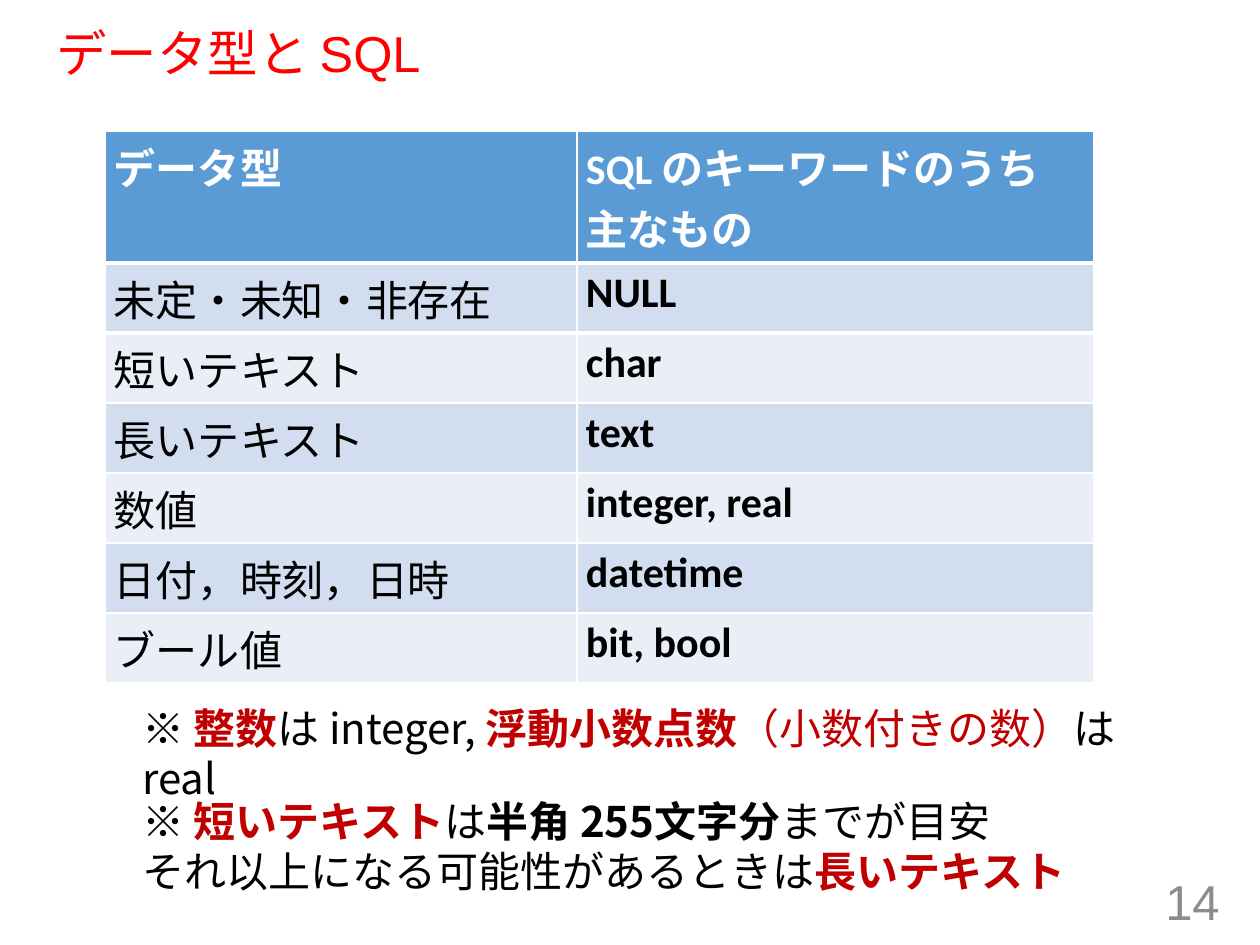
"""Build the slide on data types and their SQL keywords."""
from lxml.etree import SubElement
from pptx import Presentation
from pptx.dml.color import RGBColor
from pptx.enum.text import MSO_ANCHOR, PP_ALIGN
from pptx.oxml.ns import qn
from pptx.util import Emu, Pt

SCALE = 914400 / 126
CJK = "Noto Sans CJK JP"
RED = RGBColor(0xFF, 0x00, 0x00)
DARK_RED = RGBColor(0xC0, 0x00, 0x00)
BLACK = RGBColor(0x00, 0x00, 0x00)
WHITE = RGBColor(0xFF, 0xFF, 0xFF)
GRAY = RGBColor(0x8C, 0x8C, 0x8C)
HEADER = RGBColor(0x5B, 0x9B, 0xD5)
BANDS = (RGBColor(0xD2, 0xDE, 0xEF), RGBColor(0xEA, 0xEF, 0xF7))

HEADINGS = ("データ型", "SQL のキーワードのうち\n主なもの")
TYPES = (
    ("未定・未知・非存在", "NULL"),
    ("短いテキスト", "char"),
    ("長いテキスト", "text"),
    ("数値", "integer, real"),
    ("日付，時刻，日時", "datetime"),
    ("ブール値", "bit, bool"),
)
KEY = {"color": DARK_RED, "bold": True}
NUMBER_NOTE = [[
    ("※ ", {}), ("整数", KEY), ("は integer, ", {}), ("浮動小数点数", KEY),
    ("（小数付きの数）", {"color": DARK_RED}), ("は real", {}),
]]
TEXT_NOTE = [
    [("※ ", {}), ("短いテキスト", KEY), ("は", {}),
     ("半角 255文字分", {"bold": True}), ("までが目安", {})],
    [("それ以上になる可能性があるときは", {}), ("長いテキスト", KEY)],
]


def px(n):
    """Turn pixels into EMU."""
    return Emu(round(n * SCALE))


def add_run(p, text, size=24, font=CJK, color=BLACK, bold=False):
    """Add formatted text to a paragraph."""
    r = p.add_run()
    r.text = text
    r.font.size = Pt(size)
    r.font.name = font
    r.font.bold = bold
    r.font.color.rgb = color
    SubElement(r.font._element, qn("a:ea"), typeface=CJK)


def add_text(s, box, paragraphs, anchor=MSO_ANCHOR.TOP, align=PP_ALIGN.LEFT,
             spacing=None, wrap=True):
    """Add a text box of paragraphs made of (text, format) runs."""
    tf = s.shapes.add_textbox(*map(px, box)).text_frame
    tf.word_wrap = wrap
    tf.vertical_anchor = anchor
    for i, runs in enumerate(paragraphs):
        p = tf.add_paragraph() if i else tf.paragraphs[0]
        p.alignment = align
        p.line_spacing = spacing
        for text, fmt in runs:
            add_run(p, text, **fmt)


def add_border(cell, side, width):
    """Draw a white border on one side of a table cell."""
    props = cell._tc.get_or_add_tcPr()
    line = SubElement(props, qn(f"a:ln{side}"), w=str(Pt(width)))
    fill = SubElement(line, qn("a:solidFill"))
    SubElement(fill, qn("a:srgbClr"), val=str(WHITE))


def fill_cell(cell, text, fill, **fmt):
    """Set the fill, margins and text of a table cell."""
    cell.fill.solid()
    cell.fill.fore_color.rgb = fill
    cell.margin_left = cell.margin_right = px(9)
    cell.margin_top = cell.margin_bottom = px(5)
    tf = cell.text_frame
    for i, line in enumerate(text.split("\n")):
        add_run(tf.add_paragraph() if i else tf.paragraphs[0], line, **fmt)


def add_type_table(s):
    """Add the table of data types and keywords."""
    frame = s.shapes.add_table(len(TYPES) + 1, 2, px(105), px(131), px(989), px(552))
    table = frame.table
    for column, width in zip(table.columns, (472, 517)):
        column.width = px(width)
    for i, row in enumerate(table.rows):
        row.height = px(70 if i else 132)
    for j, heading in enumerate(HEADINGS):
        add_border(table.cell(0, j), "B", 3)
        add_border(table.cell(1, j), "T", 3)
        fill_cell(table.cell(0, j), heading, HEADER, font="Calibri", color=WHITE, bold=True)
    for i, (name, keyword) in enumerate(TYPES):
        band = BANDS[i % 2]
        fill_cell(table.cell(i + 1, 0), name, band)
        fill_cell(table.cell(i + 1, 1), keyword, band, font="Calibri", bold=True)


def main():
    """Build and save the slide."""
    prs = Presentation()
    prs.slide_width, prs.slide_height = px(1260), px(945)
    s = prs.slides.add_slide(prs.slide_layouts[6])
    title = ("データ型と SQL", {"size": 28.8, "font": "Arial", "color": RED})
    add_text(s, (44, 24, 1166, 64), [[title]], anchor=MSO_ANCHOR.MIDDLE, spacing=0.9)
    number = ("14", {"size": 28, "font": "Arial", "color": GRAY})
    add_text(s, (949, 876, 283, 50), [[number]], anchor=MSO_ANCHOR.MIDDLE,
             align=PP_ALIGN.RIGHT)
    add_type_table(s)
    add_text(s, (130, 696, 1000, 115), NUMBER_NOTE)
    add_text(s, (130, 789, 959, 115), TEXT_NOTE, wrap=False)
    prs.save("out.pptx")


if __name__ == "__main__":
    main()
